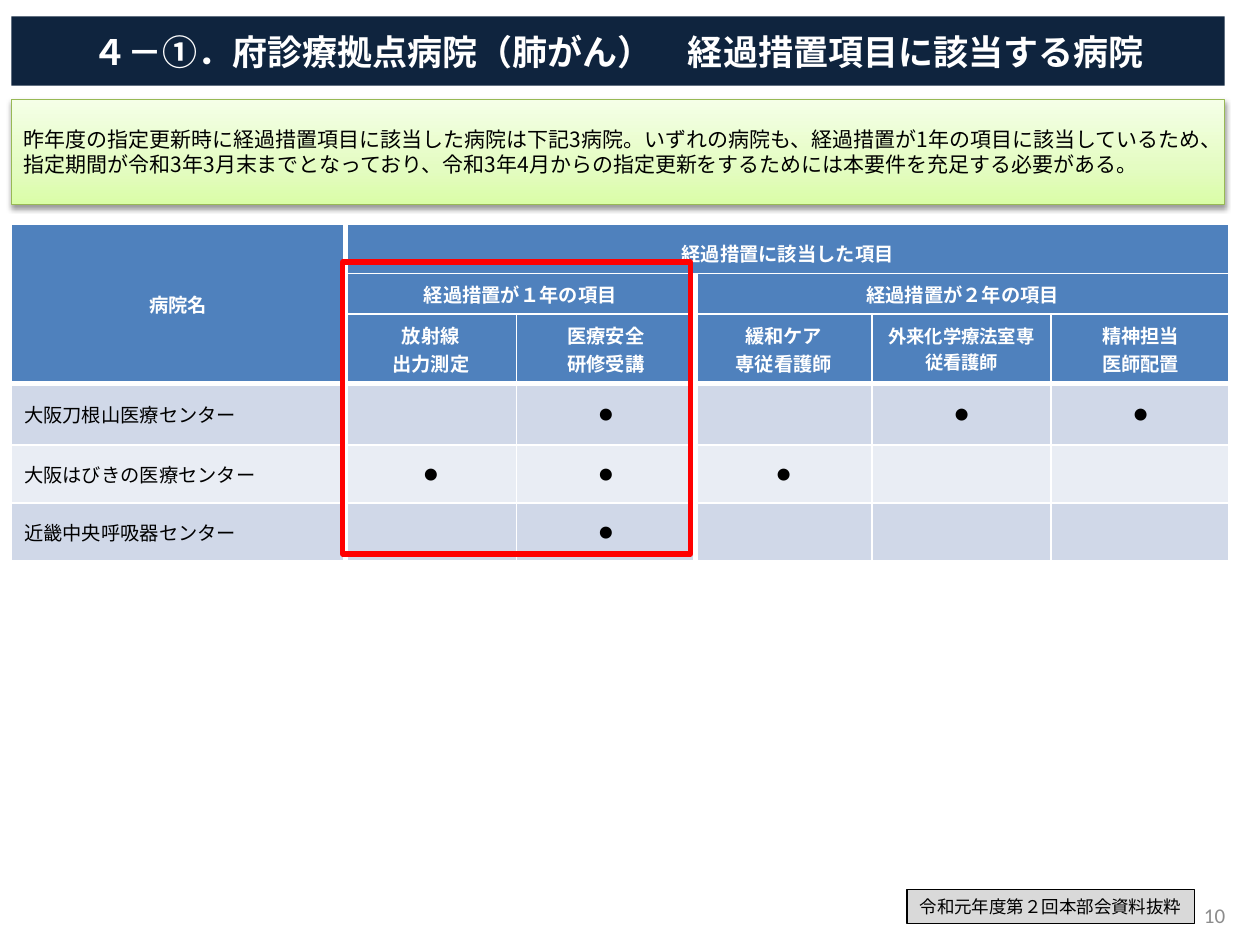
from copy import deepcopy

from lxml.etree import SubElement
from pptx import Presentation
from pptx.dml.color import RGBColor
from pptx.enum.lang import MSO_LANGUAGE_ID as Language
from pptx.enum.shapes import MSO_SHAPE as Shape
from pptx.enum.text import MSO_ANCHOR as Anchor, MSO_AUTO_SIZE as AutoSize, PP_ALIGN as Align
from pptx.oxml.ns import qn
from pptx.util import Cm, Pt

# Content
TITLE = "４－①．府診療拠点病院（肺がん）\u3000経過措置項目に該当する病院".replace("\u3000", "　")
SUMMARY = (
    "昨年度の指定更新時に経過措置項目に該当した病院は下記3病院。"
    "いずれの病院も、経過措置が1年の項目に該当しているため、"
    "指定期間が令和3年3月末までとなっており、"
    "令和3年4月からの指定更新をするためには本要件を充足する必要がある。"
)
SOURCE_NOTE = "令和元年度第２回本部会資料抜粋"
PAGE_NUMBER = "10"

# Header cells: row, column, rows spanned, columns spanned, lines of text
HEADERS = [
    (0, 0, 3, 1, ["病院名"]),
    (0, 1, 1, 5, ["経過措置に該当した項目"]),
    (1, 1, 1, 2, ["経過措置が１年の項目"]),
    (1, 3, 1, 3, ["経過措置が２年の項目"]),
    (2, 1, 1, 1, ["放射線", "出力測定"]),
    (2, 2, 1, 1, ["医療安全", "研修受講"]),
    (2, 3, 1, 1, ["緩和ケア", "専従看護師"]),
    (2, 4, 1, 1, ["外来化学療法室専従看護師"]),
    (2, 5, 1, 1, ["精神担当", "医師配置"]),
]
# Hospitals and the columns in which each is marked
HOSPITALS = [
    ("大阪刀根山医療センター", {2, 4, 5}),
    ("大阪はびきの医療センター", {1, 2, 3}),
    ("近畿中央呼吸器センター", {2}),
]
MARK = "●"

COLUMN_WIDTHS = [6.73, 3.45, 3.61, 3.56, 3.61, 3.61]
ROW_HEIGHTS = [0.79, 0.81, 1.4, 1.24, 1.17, 1.17]
HEADER_ROWS = 3
HEAVY_COLUMN_EDGES = {1, 3, 6}
ROW_EDGE_WIDTHS = {1: 0.75, 3: 3}

COLORS = {
    "navy": "0F243E", "white": "FFFFFF", "black": "000000", "red": "FF0000",
    "header": "4F81BD", "band": "D0D8E8", "light_band": "E9EDF4",
    "green_line": "98B955", "gray": "D9D9D9", "number": "8C8C8C",
}
GREENS = [(0, "DAFDA7"), (0.35, "E4FCC2"), (1, "F5FFE7")]
JAPANESE_FONT = "Noto Sans CJK JP"
LATIN_FONT = "Calibri"
LEFT, BANNER_WIDTH = 0.23, 24.46


def rgb(name):
    return RGBColor.from_string(COLORS[name])


def write(frame, lines, size, color, align=Align.LEFT, font=JAPANESE_FONT, bold=False):
    for index, line in enumerate(lines):
        para = frame.add_paragraph() if index else frame.paragraphs[0]
        para.alignment = align
        span = para.add_run()
        span.text = line
        span.font.size = Pt(size)
        span.font.bold = bold
        span.font.name = font
        span.font.color.rgb = rgb(color)
        span.font.language_id = Language.JAPANESE
        SubElement(span.font._element, qn("a:ea"), typeface=JAPANESE_FONT)


def add_box(page, left, top, width, height, fill=None, line=None, line_width=1):
    box = page.shapes.add_shape(Shape.RECTANGLE, Cm(left), Cm(top), Cm(width), Cm(height))
    box.shadow.inherit = False
    if fill:
        box.fill.solid()
        box.fill.fore_color.rgb = rgb(fill)
    else:
        box.fill.background()
    if line:
        box.line.color.rgb = rgb(line)
        box.line.width = Pt(line_width)
    else:
        box.line.fill.background()
    box.text_frame.word_wrap = True
    box.text_frame.vertical_anchor = Anchor.MIDDLE
    return box


def shade_green(box):
    box.fill.gradient()
    box.fill.gradient_angle = 90
    stop_list = box._element.spPr.find(".//" + qn("a:gsLst"))
    stop_list.insert(1, deepcopy(stop_list[0]))
    for stop, (position, color) in zip(box.fill.gradient_stops, GREENS):
        stop.position = position
        stop.color.rgb = RGBColor.from_string(color)


def drop_shadow(box):
    effects = box._element.spPr.find(qn("a:effectLst"))
    shadow = SubElement(effects, qn("a:outerShdw"), blurRad=str(Pt(3.1)), dist=str(Pt(1.6)),
                        dir="5400000", rotWithShape="0")
    color = SubElement(shadow, qn("a:srgbClr"), val=COLORS["black"])
    SubElement(color, qn("a:alpha"), val="38000")


def style_cell(cell, row, column, fill):
    """Draw the white grid around a cell, then fill it."""
    right, bottom = column + cell.span_width, row + cell.span_height
    widths = {
        "a:lnL": 3 if column in HEAVY_COLUMN_EDGES else 1,
        "a:lnR": 3 if right in HEAVY_COLUMN_EDGES else 1,
        "a:lnT": ROW_EDGE_WIDTHS.get(row, 1),
        "a:lnB": ROW_EDGE_WIDTHS.get(bottom, 1),
    }
    properties = cell._tc.get_or_add_tcPr()
    for tag, width in widths.items():
        border = SubElement(properties, qn(tag), w=str(Pt(width)))
        paint = SubElement(border, qn("a:solidFill"))
        SubElement(paint, qn("a:srgbClr"), val=COLORS["white"])
    cell.fill.solid()
    cell.fill.fore_color.rgb = rgb(fill)
    cell.vertical_anchor = Anchor.MIDDLE


def add_hospital_table(page):
    table = page.shapes.add_table(
        len(ROW_HEIGHTS), len(COLUMN_WIDTHS), Cm(LEFT), Cm(4.52),
        Cm(sum(COLUMN_WIDTHS)), Cm(sum(ROW_HEIGHTS))).table
    for column, width in zip(table.columns, COLUMN_WIDTHS):
        column.width = Cm(width)
    for row, height in zip(table.rows, ROW_HEIGHTS):
        row.height = Cm(height)

    # Headers
    for row, column, row_span, column_span, lines in HEADERS:
        cell = table.cell(row, column)
        if row_span * column_span > 1:
            cell.merge(table.cell(row + row_span - 1, column + column_span - 1))
        style_cell(cell, row, column, "header")
        size = 10.5 if len(lines[0]) > 11 else 11
        write(cell.text_frame, lines, size, "white", Align.CENTER, LATIN_FONT, bold=True)
    items_header = table.cell(0, 1)
    items_header.vertical_anchor = Anchor.BOTTOM
    items_header.margin_top = Cm(0.3)

    # Hospitals
    for row, (hospital, marked) in enumerate(HOSPITALS, HEADER_ROWS):
        fill = "light_band" if (row - HEADER_ROWS) % 2 else "band"
        for column in range(len(COLUMN_WIDTHS)):
            cell = table.cell(row, column)
            style_cell(cell, row, column, fill)
            if column == 0:
                write(cell.text_frame, [hospital], 11, "black", font=LATIN_FONT)
            elif column in marked:
                write(cell.text_frame, [MARK], 14.8, "black", Align.CENTER, LATIN_FONT)


def main():
    deck = Presentation()
    deck.slide_width, deck.slide_height = Cm(25.4), Cm(19.05)
    page = deck.slides.add_slide(deck.slide_layouts[6])

    # Title banner
    banner = add_box(page, LEFT, 0.33, BANNER_WIDTH, 1.4, fill="navy")
    banner.text_frame.margin_top = banner.text_frame.margin_bottom = 0
    write(banner.text_frame, [TITLE], 20, "white", Align.CENTER, bold=True)

    # Table with the one-year items framed
    add_hospital_table(page)
    add_box(page, 6.91, 5.28, 7.01, 5.89, line="red", line_width=3)

    # Summary
    summary = add_box(page, LEFT, 2.01, BANNER_WIDTH, 2.11, line="green_line", line_width=0.75)
    shade_green(summary)
    drop_shadow(summary)
    write(summary.text_frame, [SUMMARY], 12, "black")

    # Page number and source note
    number = page.shapes.add_textbox(Cm(19.23), Cm(17.93), Cm(5.72), Cm(1.02))
    number.text_frame.word_wrap = True
    number.text_frame.vertical_anchor = Anchor.MIDDLE
    write(number.text_frame, [PAGE_NUMBER], 12, "number", Align.RIGHT, LATIN_FONT)

    note = add_box(page, 18.29, 17.93, 5.79, 0.69, fill="gray", line="black")
    note.text_frame.vertical_anchor = Anchor.TOP
    note.text_frame.auto_size = AutoSize.SHAPE_TO_FIT_TEXT
    write(note.text_frame, [SOURCE_NOTE], 10, "black")

    deck.save("out.pptx")


if __name__ == "__main__":
    main()
